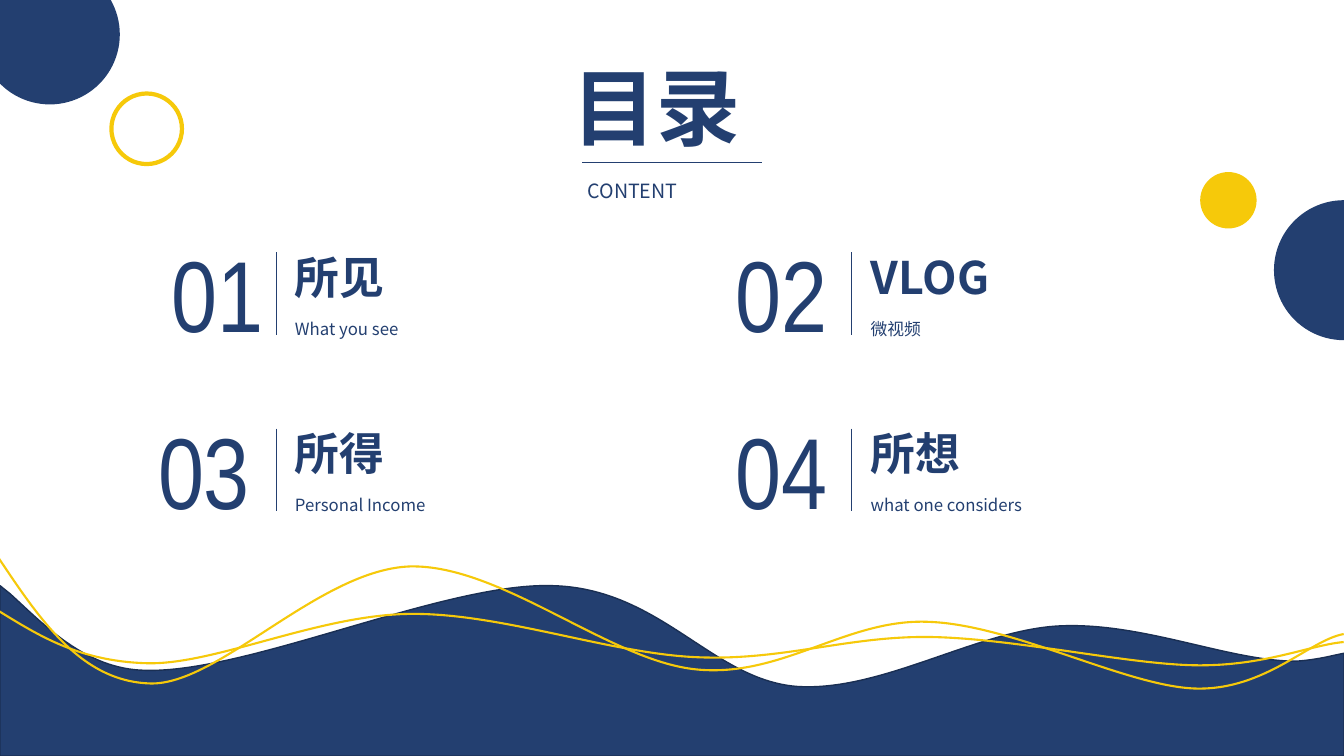
from lxml import etree
from pptx import Presentation
from pptx import util as u
from pptx.dml import color
from pptx.enum import shapes, text
from pptx.oxml import ns

Pt = u.Pt
NAVY = color.RGBColor(0x23, 0x3F, 0x70)
DARK = color.RGBColor(0x1A, 0x2F, 0x53)
GOLD = color.RGBColor(0xF6, 0xC9, 0x0A)
SANS = "Noto Sans CJK SC"
SLIM = "Arial Narrow"

TITLE = {"size": Pt(60), "name": SANS, "bold": True}
LABEL = {"size": Pt(14), "name": SANS}
DIGIT = {"size": Pt(72), "name": SLIM}
HEAD = {"size": Pt(32), "name": SANS, "bold": True}
NOTE = {"size": Pt(12), "name": SANS}

HILL = [[(393.8, 418.3)],
        [(471.6, 419.8), (508.3, 485.3), (568.8, 490.3)],
        [(629.3, 494.6), (697.7, 450), (756.7, 447.1)],
        [(816.5, 444.2), (877.7, 472.3), (925.9, 472.3)],
        [(935.3, 471.6), (943.9, 470.2), (953.3, 468)],
        [(960, 466.6)], [(960, 540)], [(0, 540)], [(0, 418.3)], [(7.2, 424.1)],
        [(31.7, 446.4), (61.2, 478.1), (103.7, 478.8)],
        [(177.1, 481), (316.8, 416.2), (393.8, 418.3)]]
WAVE_X = [-2.2, 28.1, 57.6, 107.3, 156.2, 228.2, 293, 357.8, 434.9, 496.8,
          558.7, 604.8, 663.8, 723.6, 805, 853.9, 903.6, 935.3, 959.8]
HIGH_Y = [396.7, 442.1, 486.7, 488.2, 489.6, 406.8, 404.6, 403.2, 471.6, 478.1,
          484.6, 441.4, 444.2, 446.4, 490.3, 491.8, 493.2, 457.2, 452.9]
LOW_Y = [435.6, 454.3, 473, 473.8, 473.8, 439.2, 438.5, 437.8, 466.6, 469.4,
         472.3, 454.3, 455, 455.8, 474.5, 475.2, 475.9, 460.8, 458.6]

DISCS = [(-14.4, -25.4, 100, NAVY, None),
         (79.6, 66.8, 50.4, None, GOLD),
         (910, 143, 100, NAVY, None),
         (857.3, 122.9, 40.3, GOLD, None)]
ITEMS = [("01", "所见", "What you see", 115.2, 81.4),
         ("02", "VLOG", "微视频", 518.4, 90),
         ("03", "所得", "Personal Income", 105.8, 92.2),
         ("04", "所想", "what one considers", 518.4, 90)]


def paint(shape, fill=None, line=None, width=1):
    shape.shadow.inherit = False
    if fill is None:
        shape.fill.background()
    else:
        shape.fill.solid()
        shape.fill.fore_color.rgb = fill
    if line is None:
        shape.line.fill.background()
    else:
        shape.line.color.rgb = line
        shape.line.width = Pt(width)


def pair_up(heights):
    dots = list(zip(WAVE_X, heights))
    return [dots[:1]] + [dots[i:i + 3] for i in range(1, len(dots), 3)]


def add_wave(tree, parts, close=False, **style):
    ends = [(Pt(part[-1][0]), Pt(part[-1][1])) for part in parts]
    form = tree.build_freeform(*ends[0], scale=1.0)
    form.add_line_segments(ends[1:], close=close)
    wave = form.convert_to_shape()
    paint(wave, **style)
    nodes = list(wave._element.iter(ns.qn("a:lnTo")))
    for node, part in zip(nodes, parts[1:]):
        if len(part) == 3:
            node.tag = ns.qn("a:cubicBezTo")
            for spot, (x, y) in enumerate(part[:2]):
                knot = etree.Element(ns.qn("a:pt"))
                knot.set("x", str(Pt(x) - wave.left))
                knot.set("y", str(Pt(y) - wave.top))
                node.insert(spot, knot)


def add_disc(tree, x, y, size, fill, line):
    disc = tree.add_shape(shapes.MSO_SHAPE.OVAL, Pt(x), Pt(y), Pt(size), Pt(size))
    paint(disc, fill, line, 3)


def add_rule(tree, x, y, wide, high):
    rule = tree.add_connector(shapes.MSO_CONNECTOR.STRAIGHT,
                              Pt(x), Pt(y), Pt(x + wide), Pt(y + high))
    rule.line.color.rgb = NAVY
    rule.line.width = Pt(0.5)
    etree.SubElement(rule._element.spPr, ns.qn("a:effectLst"))


def add_text(tree, words, box, font, para=None, wrap=True):
    frame = tree.add_textbox(*map(Pt, box)).text_frame
    frame.word_wrap = wrap
    frame.auto_size = text.MSO_AUTO_SIZE.SHAPE_TO_FIT_TEXT
    line = frame.paragraphs[0]
    for key, value in (para or {}).items():
        setattr(line, key, value)
    run = line.add_run()
    run.text = words
    run.font.color.rgb = NAVY
    for key, value in font.items():
        setattr(run.font, key, value)
    east = etree.SubElement(run._r.get_or_add_rPr(), ns.qn("a:ea"))
    east.set("typeface", font["name"])


def add_item(tree, index, digit, head, note, left, wide):
    row, col = divmod(index, 2)
    x, y = 197.2 + 411.2 * col, 162.1 + 126.1 * row
    group = tree.add_group_shape().shapes
    add_text(group, digit, (left, y, wide, 94.3), DIGIT, wrap=False)
    add_text(group, head, (x + 6.4, y + 12.5, 218.9, 46.1), HEAD)
    add_text(group, note, (x + 6.4, y + 59, 231.1, 24.5), NOTE, {"line_spacing": 1.2})
    add_rule(group, x, y + 17.9, 0, 59)


def main():
    deck = Presentation()
    deck.slide_width, deck.slide_height = Pt(960), Pt(540)
    tree = deck.slides.add_slide(deck.slide_layouts[6]).shapes
    add_wave(tree, HILL, close=True, fill=NAVY, line=DARK)
    for heights in (HIGH_Y, LOW_Y):
        add_wave(tree, pair_up(heights), line=GOLD, width=1.5)
    for disc in DISCS:
        add_disc(tree, *disc)
    even = {"alignment": text.PP_ALIGN.JUSTIFY}
    add_text(tree, "目录", (401.8, 36, 155.5, 79.9), TITLE, even)
    add_text(tree, "CONTENT", (412.6, 124.1, 135.4, 24.5), LABEL, even)
    add_rule(tree, 416, 115.9, 128.3, 0)
    for index, item in enumerate(ITEMS):
        add_item(tree, index, *item)
    deck.save("out.pptx")


if __name__ == "__main__":
    main()
